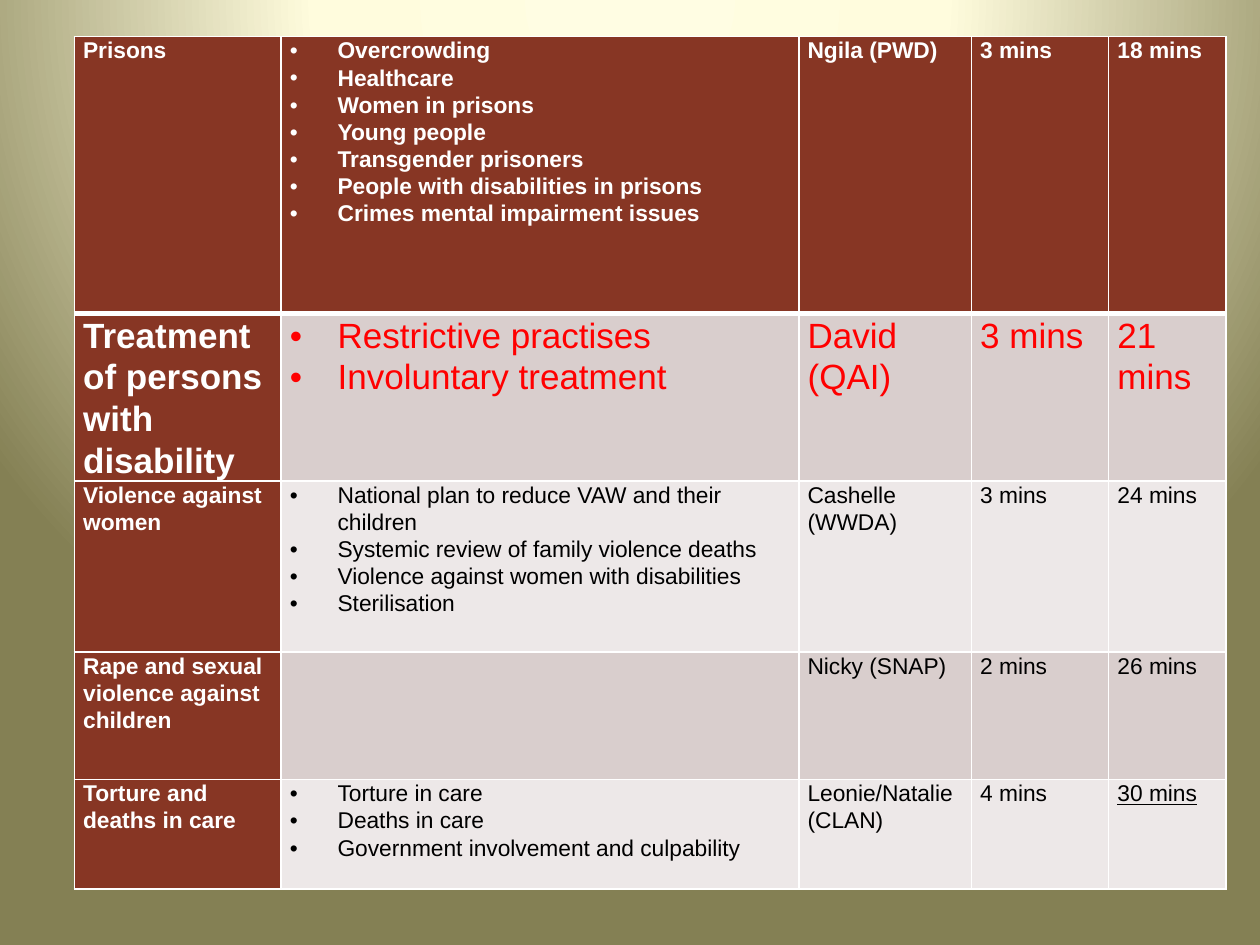
from lxml import etree
from pptx import Presentation
from pptx.dml.color import RGBColor
from pptx.oxml import parse_xml
from pptx.oxml.ns import nsdecls, qn
from pptx.util import Inches, Pt

WHITE = RGBColor(0xFF, 0xFF, 0xFF)
BLACK = RGBColor(0x00, 0x00, 0x00)
RED = RGBColor(0xFF, 0x00, 0x00)
BROWN = RGBColor(0x87, 0x36, 0x24)
DARK_BAND = RGBColor(0xD9, 0xCE, 0xCD)
LIGHT_BAND = RGBColor(0xED, 0xE8, 0xE8)

BULLET_COLUMN = 1
COLUMN_WIDTHS = [1.64, 4.11, 1.37, 1.09, 0.93]
ROW_HEIGHTS = [2.2, 1.1, 1.36, 1.01, 0.87]

# Topic, issues, speaker, speaking time, running total
AGENDA = [
    ["Prisons",
     ["Overcrowding", "Healthcare", "Women in prisons", "Young people",
      "Transgender prisoners", "People with disabilities in prisons",
      "Crimes mental impairment issues"],
     "Ngila (PWD)", "3 mins", "18 mins"],
    ["Treatment of persons with disability",
     ["Restrictive practises", "Involuntary treatment"],
     "David (QAI)", "3 mins", "21 mins"],
    ["Violence against women",
     ["National plan to reduce VAW and their children",
      "Systemic review of family violence deaths",
      "Violence against women with disabilities", "Sterilisation"],
     "Cashelle (WWDA)", "3 mins", "24 mins"],
    ["Rape and sexual violence against children", [],
     "Nicky (SNAP)", "2 mins", "26 mins"],
    ["Torture and deaths in care",
     ["Torture in care", "Deaths in care",
      "Government involvement and culpability"],
     "Leonie/Natalie (CLAN)", "4 mins", "30 mins"],
]


def write_cell(cell, lines, size=13, color=BLACK, bold=False,
               underline=False, bullets=False):
    frame = cell.text_frame
    for index, line in enumerate(lines):
        para = frame.add_paragraph() if index else frame.paragraphs[0]
        para.line_spacing = 1.07
        if bullets:
            props = para._p.get_or_add_pPr()
            props.set("marL", str(Inches(0.38)))
            props.set("indent", str(-Inches(0.38)))
            etree.SubElement(props, qn("a:buFont")).set("typeface", "Arial")
            etree.SubElement(props, qn("a:buChar")).set("char", "•")
        span = para.add_run()
        span.text = line
        span.font.name = "Arial"
        span.font.size = Pt(size)
        span.font.bold = bold
        span.font.underline = underline
        span.font.color.rgb = color


def set_borders(cell, **widths):
    props = cell._tc.get_or_add_tcPr()
    for side in ("L", "R", "T", "B"):
        width = Pt(widths.get(side, 1))
        props.append(parse_xml(
            f'<a:ln{side} {nsdecls("a")} w="{width}"><a:solidFill>'
            f'<a:srgbClr val="{WHITE}"/></a:solidFill></a:ln{side}>'))


deck = Presentation()
deck.slide_width = Inches(10)
deck.slide_height = Inches(7.5)
page = deck.slides.add_slide(deck.slide_layouts[6])

# Background: glow spreading from above the top edge
stops = "".join(
    f'<a:gs pos="{place * 1000}"><a:srgbClr val="{color}"/></a:gs>'
    for place, color in [(0, "FFFDE3"), (40, "FFFCDD"), (100, "848054")])
page._element.cSld.insert(0, parse_xml(
    f'<p:bg {nsdecls("p", "a")}><p:bgPr><a:gradFill rotWithShape="1">'
    f'<a:gsLst>{stops}</a:gsLst><a:path path="circle">'
    '<a:fillToRect l="50000" t="-80000" r="50000" b="180000"/></a:path>'
    '</a:gradFill><a:effectLst/></p:bgPr></p:bg>'))

# Agenda table
table = page.shapes.add_table(
    len(AGENDA), len(COLUMN_WIDTHS), Inches(0.59), Inches(0.29),
    Inches(sum(COLUMN_WIDTHS)), Inches(sum(ROW_HEIGHTS))).table
for column, width in zip(table.columns, COLUMN_WIDTHS):
    column.width = Inches(width)
for row, height in zip(table.rows, ROW_HEIGHTS):
    row.height = Inches(height)

for row_index, entry in enumerate(AGENDA):
    is_highlight = row_index == 1
    for column_index, content in enumerate(entry):
        cell = table.cell(row_index, column_index)
        is_header = row_index == 0 or column_index == 0
        is_grand_total = (row_index == len(AGENDA) - 1
                          and column_index == len(entry) - 1)

        cell.margin_left = cell.margin_right = Inches(0.07)
        cell.margin_top = cell.margin_bottom = 0
        set_borders(cell, T=3 if row_index == 1 else 1,
                    B=3 if row_index == 0 else 1)
        cell.fill.solid()
        band = DARK_BAND if row_index % 2 else LIGHT_BAND
        cell.fill.fore_color.rgb = BROWN if is_header else band

        body_color = RED if is_highlight else BLACK
        has_bullets = column_index == BULLET_COLUMN
        write_cell(cell, content if has_bullets else [content],
                   size=20 if is_highlight else 13,
                   color=WHITE if is_header else body_color,
                   bold=is_header, underline=is_grand_total,
                   bullets=has_bullets)

deck.save("out.pptx")
